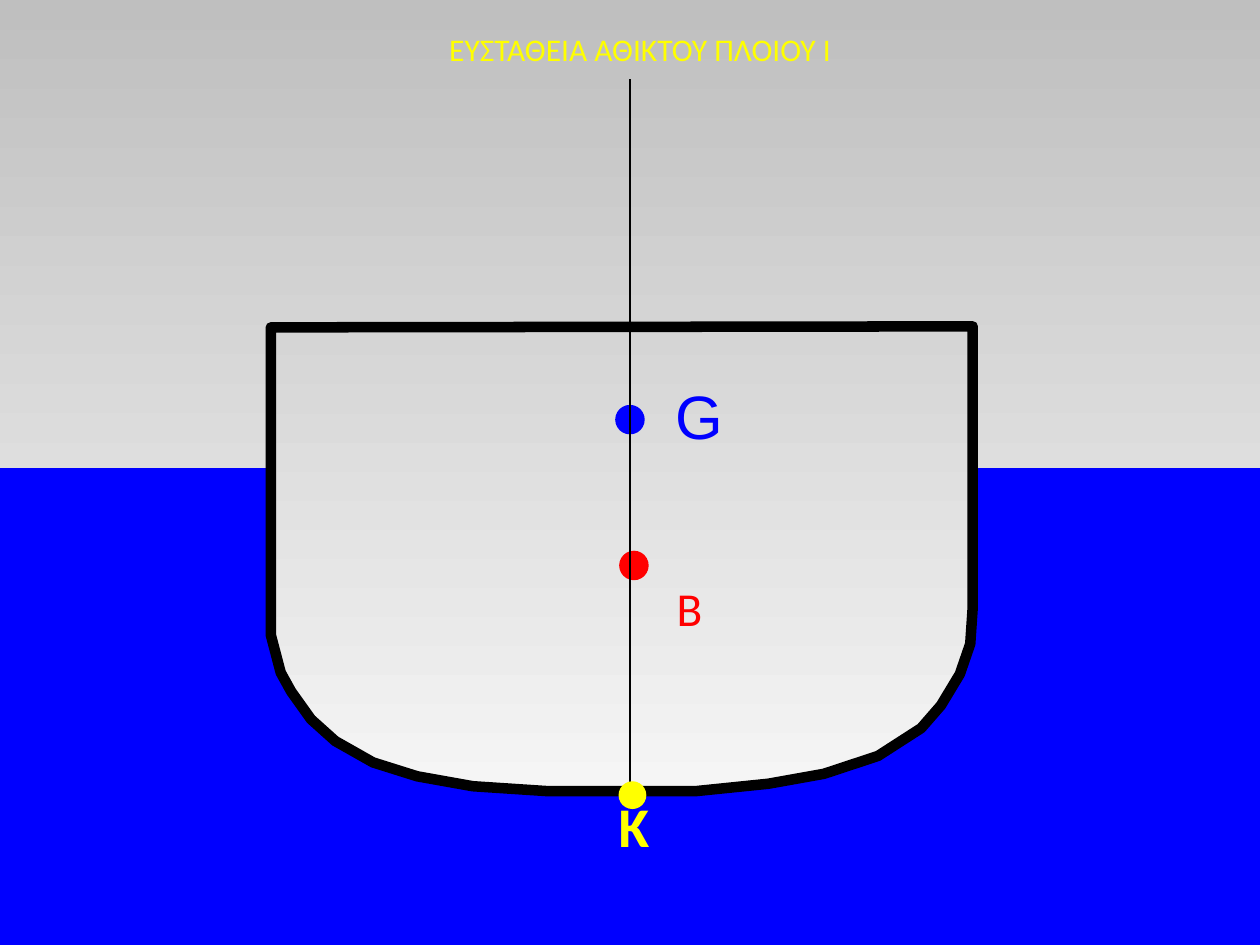
from lxml import etree
from pptx import Presentation
from pptx.dml.color import RGBColor
from pptx.enum.shapes import MSO_CONNECTOR, MSO_SHAPE
from pptx.enum.text import MSO_ANCHOR, MSO_AUTO_SIZE, PP_ALIGN
from pptx.oxml.ns import qn
from pptx.util import Cm, Pt

OVAL = MSO_SHAPE.OVAL
LINE = MSO_CONNECTOR.STRAIGHT
MID, LOW = MSO_ANCHOR.MIDDLE, MSO_ANCHOR.BOTTOM
LEFT, CENTER = PP_ALIGN.LEFT, PP_ALIGN.CENTER
FIT = MSO_AUTO_SIZE.SHAPE_TO_FIT_TEXT

WIDTH, HEIGHT = 25.4, 19.05
AXIS = WIDTH / 2
SEA = 9.45

HEX = {
    "blue": "0000FF",
    "red": "FF0000",
    "yellow": "FFFF00",
    "black": "000000",
    "sky": "BFBFBF",
    "deck": "D5D5D5",
    "keel": "F5F5F5",
    "white": "FFFFFF",
}

HULL = [
    (5.46, 6.6), (5.46, 12.8), (5.66, 13.56), (5.87, 13.94), (6.27, 14.5),
    (6.76, 14.94), (7.52, 15.37), (8.41, 15.65), (9.53, 15.85),
    (11.05, 15.95), (14.02, 15.95), (15.49, 15.8), (16.61, 15.6),
    (17.7, 15.24), (18.57, 14.68), (18.97, 14.22), (19.35, 13.59),
    (19.56, 12.98), (19.61, 12.24), (19.61, 11.86), (19.61, 6.58),
]


class Pen:
    def __init__(self, slide, font="Calibri"):
        self.slide = slide
        self.shapes = slide.shapes
        self.font = font

    def color(self, name):
        return RGBColor.from_string(HEX[name])

    def fade(self, fill, top, end):
        """Fill with a gradient running straight down."""
        fill.gradient()
        fill.gradient_angle = 270
        for stop, name in zip(fill.gradient_stops, (top, end)):
            stop.color.rgb = self.color(name)

    def paint(self, shape, fill, line=None, width=1):
        """Fill is a colour name, or a pair of names for a gradient."""
        shape.shadow.inherit = False
        if isinstance(fill, tuple):
            self.fade(shape.fill, *fill)
        else:
            shape.fill.solid()
            shape.fill.fore_color.rgb = self.color(fill)
        if line:
            shape.line.color.rgb = self.color(line)
            shape.line.width = Pt(width)
        else:
            shape.line.fill.background()

    def area(self, points, fill, line, width=1):
        spots = [(Cm(x), Cm(y)) for x, y in points]
        form = self.shapes.build_freeform(*spots[0])
        form.add_line_segments(spots[1:], close=True)
        self.paint(form.convert_to_shape(), fill, line, width)

    def dot(self, x, y, fill, line=None, size=0.56):
        """Circle centred on x, y."""
        left, top = Cm(x - size / 2), Cm(y - size / 2)
        shape = self.shapes.add_shape(OVAL, left, top, Cm(size), Cm(size))
        self.paint(shape, fill, line)

    def rule(self, x1, y1, x2, y2, color="black", width=1):
        line = self.shapes.add_connector(LINE, Cm(x1), Cm(y1), Cm(x2), Cm(y2))
        line.line.color.rgb = self.color(color)
        line.line.width = Pt(width)
        etree.SubElement(line._element.spPr, qn("a:effectLst"))

    def text(self, words, box, size, color, font=None, bold=False,
             anchor=MID, align=LEFT, wrap=False, space=0.85):
        frame = self.shapes.add_textbox(*map(Cm, box)).text_frame
        frame.word_wrap = wrap
        frame.auto_size = FIT
        frame.vertical_anchor = anchor
        para = frame.paragraphs[0]
        para.alignment = align
        para.line_spacing = space
        run = para.add_run()
        run.text = words
        run.font.name = font or self.font
        run.font.size = Pt(size)
        run.font.bold = bold
        run.font.color.rgb = self.color(color)


def main():
    deck = Presentation()
    deck.slide_width, deck.slide_height = Cm(WIDTH), Cm(HEIGHT)
    pen = Pen(deck.slides.add_slide(deck.slide_layouts[6]))
    pen.fade(pen.slide.background.fill, "sky", "white")

    pen.text("ΕΥΣΤΑΘΕΙΑ ΑΘΙΚΤΟΥ ΠΛΟΙΟΥ I", (2.11, 0.48, 21.59, 1.02), 18,
             "yellow", align=CENTER, wrap=True, space=1.0)
    pen.area([(0, SEA), (0, HEIGHT), (WIDTH, HEIGHT), (WIDTH, SEA)],
             "blue", "blue")
    pen.area(HULL, ("deck", "keel"), "black", 6)

    pen.dot(12.78, 11.4, "red", "red")
    pen.dot(AXIS, 8.46, "blue", "blue")
    pen.text("B", (13.39, 11.73, 1.19, 1.22), 27, "red", anchor=LOW)
    pen.text("G", (13.36, 7.7, 1.85, 1.55), 35, "blue", font="Arial")
    pen.rule(AXIS, 1.6, AXIS, 16.03)
    pen.text("K", (12.22, 16.03, 1.14, 1.42), 32, "yellow", bold=True)
    pen.dot(12.75, 16.03, "yellow")

    deck.save("out.pptx")


if __name__ == "__main__":
    main()
